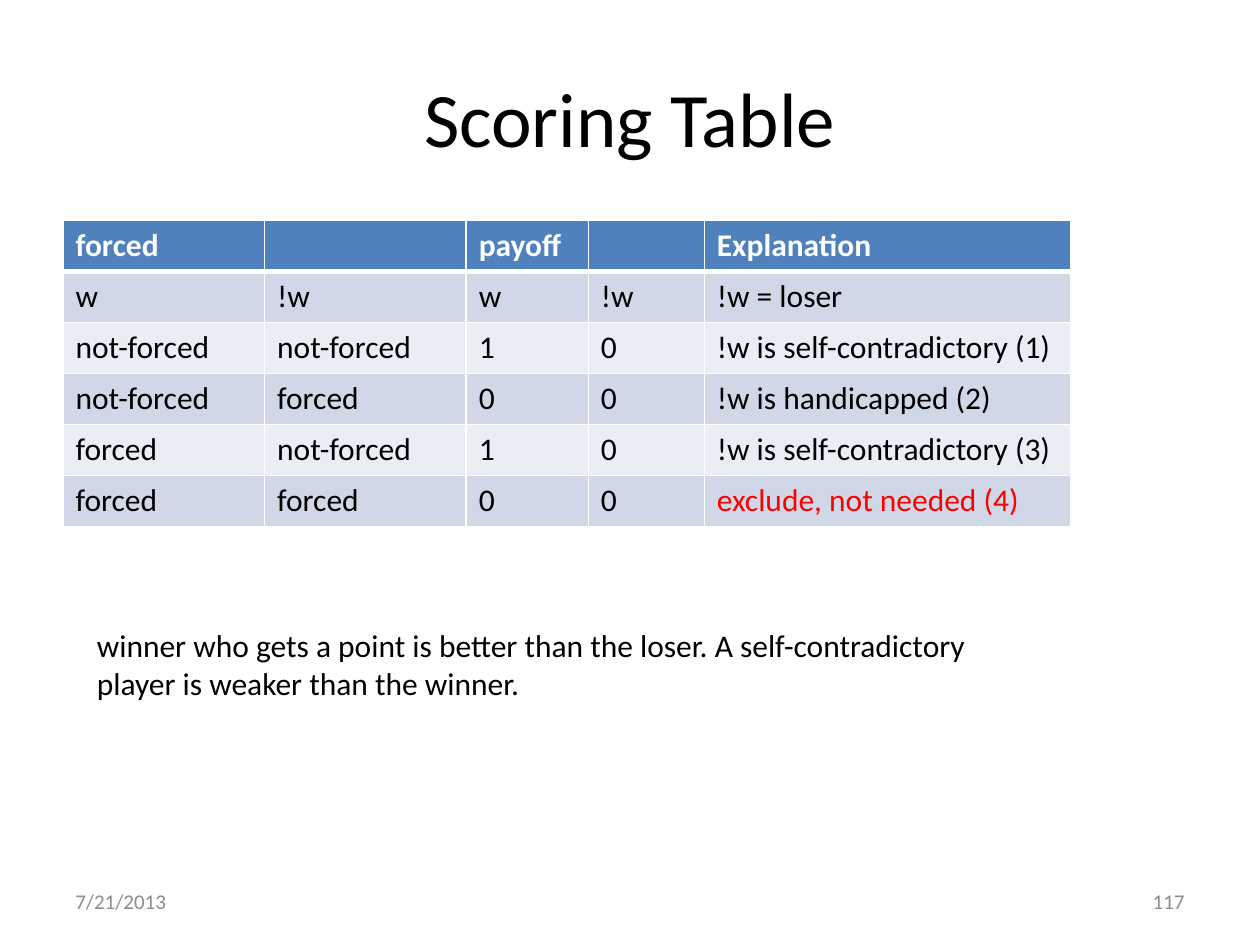
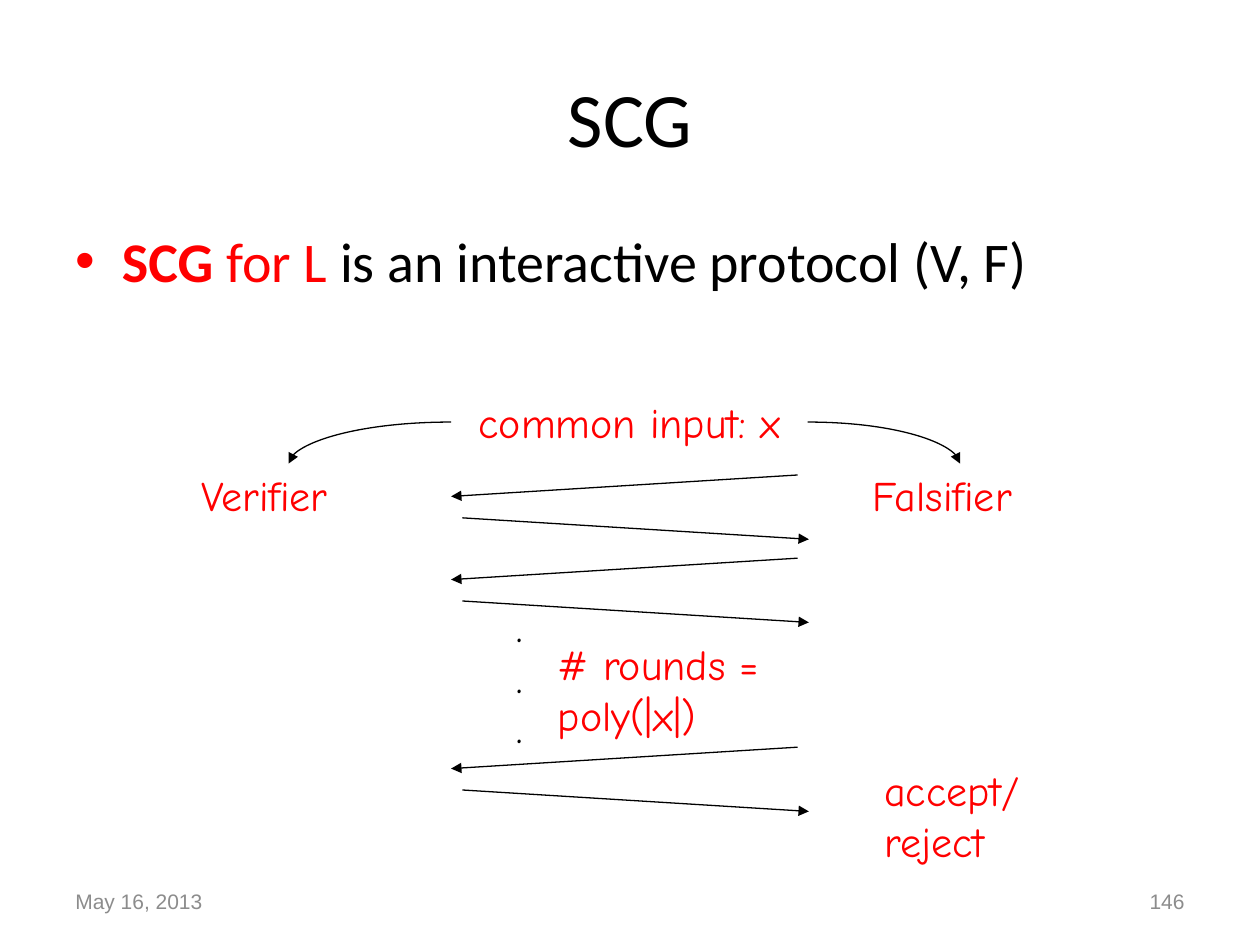
from lxml import etree
from pptx import Presentation
from pptx.dml.color import RGBColor
from pptx.enum.shapes import MSO_CONNECTOR as Conn
from pptx.enum.text import MSO_ANCHOR as Anchor, PP_ALIGN as Align
from pptx.oxml.ns import qn
from pptx.util import Inches, Pt

COLORS = {
    "text": "000000", "accent": "FF0000", "muted": "8C8C8C", "white": "FFFFFF",
    "header": "4F81BD", "band_dark": "D0D8E8", "band_light": "E9EDF4",
}
MAIN, PLAIN, HAND = "Calibri", "Arial", "Comic Neue"
TITLE_BOX = (0.5, 0.3, 9, 1.25)
TOP, LEFT = 0, 1
RIGHT = 3

SCORES = [
    ["forced", "", "payoff", "", "Explanation"],
    ["w", "!w", "w", "!w", "!w = loser"],
    ["not-forced", "not-forced", "1", "0", "!w is self-contradictory (1)"],
    ["not-forced", "forced", "0", "0", "!w is handicapped (2)"],
    ["forced", "not-forced", "1", "0", "!w is self-contradictory (3)"],
    ["forced", "forced", "0", "0", "exclude, not needed (4)"],
]
SCORE_WIDTHS = [1.6, 1.6, 0.97, 0.92, 2.91]


def rgb(name):
    return RGBColor.from_string(COLORS[name])


def style_run(r, size, color="text", font=MAIN, bold=False):
    r.font.size = Pt(size)
    r.font.name = font
    r.font.bold = bold
    r.font.color.rgb = rgb(color)


def add_text(slide, box, lines, size, color="text", font=MAIN,
             align=Align.LEFT, anchor=Anchor.TOP):
    sp = slide.shapes.add_textbox(*map(Inches, box))
    tf = sp.text_frame
    tf.word_wrap = True
    tf.vertical_anchor = anchor
    tf.text = lines
    for p in tf.paragraphs:
        p.alignment = align
        for r in p.runs:
            style_run(r, size, color, font)
    return sp


def add_arrow(slide, start, end, kind=Conn.STRAIGHT):
    cxn = slide.shapes.add_connector(kind, *map(Inches, (*start, *end)))
    cxn.line.color.rgb = rgb("text")
    cxn.line.width = Pt(0.75)
    line = cxn.line._get_or_add_ln()
    etree.SubElement(line, qn("a:tailEnd"), type="triangle")
    etree.SubElement(cxn.element.spPr, qn("a:effectLst"))
    return cxn


def add_titled_slide(prs, title, date, number, footer_font):
    """Title, date and slide number, as on every slide."""
    slide = prs.slides.add_slide(prs.slide_layouts[5])
    sp = slide.shapes.title
    sp.left, sp.top, sp.width, sp.height = map(Inches, TITLE_BOX)
    tf = sp.text_frame
    tf.text = title
    tf.vertical_anchor = Anchor.MIDDLE
    tf.paragraphs[0].alignment = Align.CENTER
    style_run(tf.paragraphs[0].runs[0], 44)
    for left, text, align in ((0.5, date, Align.LEFT), (7.17, number, Align.RIGHT)):
        add_text(slide, (left, 6.95, 2.33, 0.4), text, 12, "muted", footer_font,
                 align, Anchor.MIDDLE)
    return slide


def set_borders(cell, bottom):
    tcPr = cell._tc.get_or_add_tcPr()
    for side, width in (("L", 1), ("R", 1), ("T", 1), ("B", bottom)):
        ln = etree.SubElement(tcPr, qn(f"a:ln{side}"), w=str(Pt(width)))
        fill = etree.SubElement(ln, qn("a:solidFill"))
        etree.SubElement(fill, qn("a:srgbClr"), val=COLORS["white"])


def add_score_table(slide, box):
    rows, cols = len(SCORES), len(SCORE_WIDTHS)
    table = slide.shapes.add_table(rows, cols, *map(Inches, box)).table
    for col, width in zip(table.columns, SCORE_WIDTHS):
        col.width = Inches(width)
    for i, row in enumerate(SCORES):
        band = "header" if i == 0 else "band_dark" if i % 2 else "band_light"
        for j, text in enumerate(row):
            cell = table.cell(i, j)
            set_borders(cell, 3 if i == 0 else 1)
            cell.fill.solid()
            cell.fill.fore_color.rgb = rgb(band)
            excluded = text.startswith("exclude")
            color = "white" if i == 0 else "accent" if excluded else "text"
            cell.text = text
            for r in cell.text_frame.paragraphs[0].runs:
                style_run(r, 18, color, bold=i == 0)


def add_definition(slide, box):
    """Bulleted statement made of three differently styled runs."""
    sp = add_text(slide, box, "", 32)
    p = sp.text_frame.paragraphs[0]
    for text, color, bold in (("SCG ", "accent", True), ("for L", "accent", False),
                              (" is an interactive protocol (V, F)", "text", False)):
        r = p.add_run()
        r.text = text
        style_run(r, 32, color, bold=bold)
    pPr = p._p.get_or_add_pPr()
    pPr.set("marL", str(Inches(0.37)))
    pPr.set("indent", str(-Inches(0.37)))
    etree.SubElement(pPr, qn("a:buFont"), typeface=PLAIN)
    etree.SubElement(pPr, qn("a:buChar"), char="•")


def add_protocol(slide, box):
    """Two players, their shared input and the messages between them."""
    x, y, width, height = box

    def label(left, top, w, h, text, color="accent", align=Align.LEFT):
        return add_text(slide, (x + left, y + top, w, h), text, 24, color, HAND, align)

    # Players and common input
    verifier = label(0, 0.58, 1.58, 0.5, "Verifier")
    falsifier = label(width - 1.58, 0.58, 1.58, 0.5, "Falsifier")
    shared = label(2.08, 0, 2.83, 0.5, "common input: x", align=Align.CENTER)
    for player, side in ((verifier, LEFT), (falsifier, RIGHT)):
        curve = add_arrow(slide, (x, y), (x + 1, y + 1), Conn.CURVE)
        curve.begin_connect(shared, side)
        curve.end_connect(player, TOP)
        curve.element.spPr.find(qn("a:prstGeom")).set("prst", "curvedConnector2")

    # Each round: a message to the verifier, then one back
    near, far, inset, drop = x + 2.08, x + 4.92, 0.09, 0.17
    for top in (0.67, 1.33, 2.83):
        start = y + top
        add_arrow(slide, (far - inset, start), (near, start + drop))
        start += 2 * drop
        add_arrow(slide, (near + inset, start), (far, start + drop))

    # Number of rounds and verdict
    label(2.5, 1.62, 0.33, 1.31, ". . .", "text")
    label(2.83, 1.92, 2, 0.91, "# rounds = poly(|x|)")
    label(5.42, height - 0.91, 1.5, 0.91, "accept/reject")


def build_scoring_slide(prs):
    slide = add_titled_slide(prs, "Scoring Table", "7/21/2013", "117", MAIN)
    add_score_table(slide, (0.5, 1.75, 8, 2.43))
    add_text(slide, (0.67, 4.92, 7.29, 0.72),
             "winner who gets a point is better than the loser. A self-contradictory\n"
             "player is weaker than the winner.", 18)


def build_protocol_slide(prs):
    slide = add_titled_slide(prs, "SCG", "May 16, 2013", "146", PLAIN)
    add_definition(slide, (0.5, 1.75, 9, 4.95))
    add_protocol(slide, (1.5, 3.1, 6.91, 3.83))


def main():
    prs = Presentation()
    prs.slide_width, prs.slide_height = Inches(10), Inches(7.5)
    build_scoring_slide(prs)
    build_protocol_slide(prs)
    prs.save("out.pptx")


if __name__ == "__main__":
    main()
